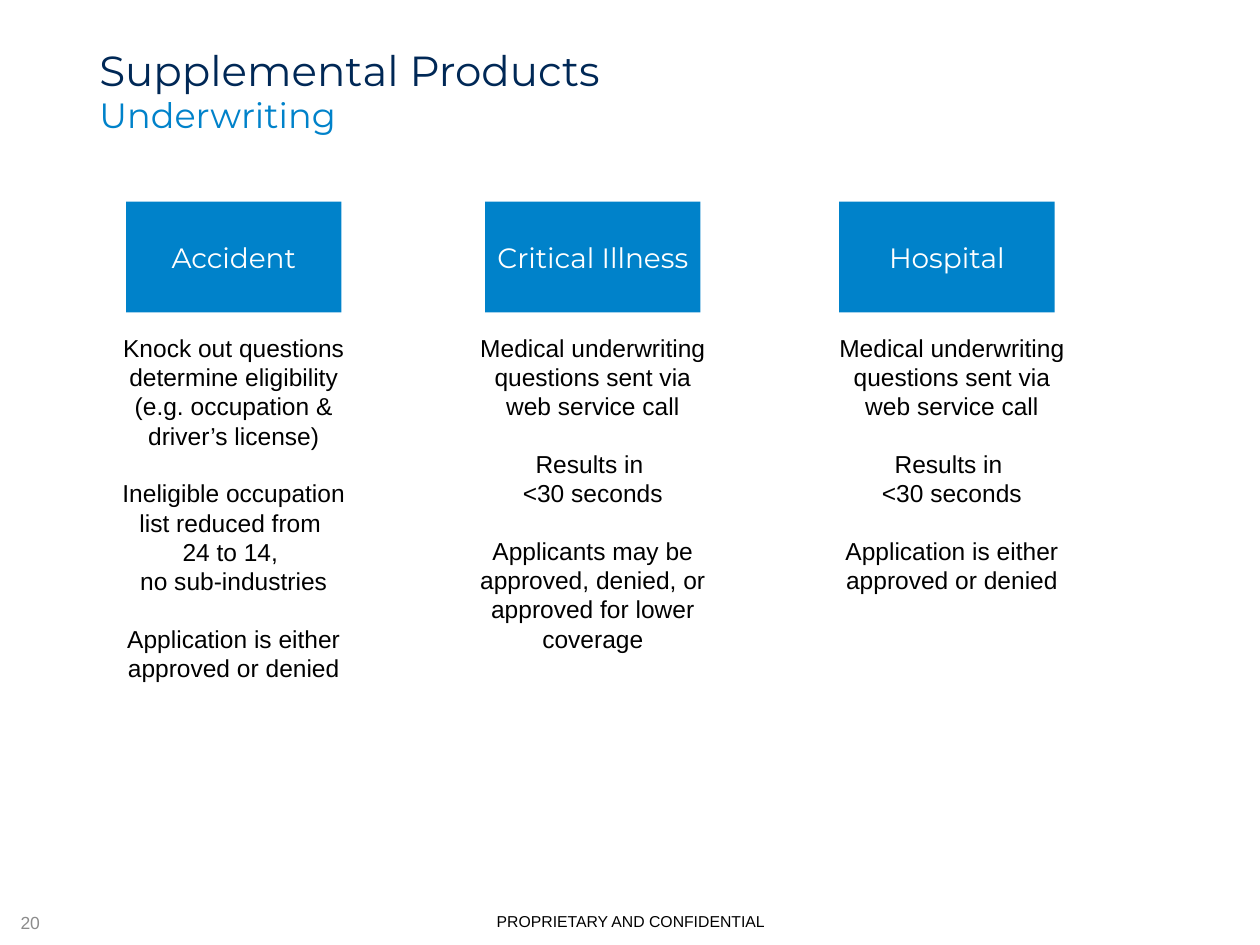
import pptx
import pptx.util
import pptx.dml.color
import pptx.enum.shapes
import pptx.enum.text

Inches = pptx.util.Inches
Pt = pptx.util.Pt
RGBColor = pptx.dml.color.RGBColor
Align = pptx.enum.text.PP_ALIGN
Anchor = pptx.enum.text.MSO_ANCHOR

NAVY = RGBColor(0x00, 0x28, 0x56)
BLUE = RGBColor(0x00, 0x82, 0xCA)
GRAY = RGBColor(0x8C, 0x8C, 0x8C)
BLACK = RGBColor(0x00, 0x00, 0x00)
WHITE = RGBColor(0xFF, 0xFF, 0xFF)
HEADING_FONT, BODY_FONT = "Montserrat", "Arial"

TITLE = "Supplemental Products"
SUBTITLE = "Underwriting"
FOOTER = "PROPRIETARY AND CONFIDENTIAL"
PAGE_NUMBER = "20"

SERVICE_CALL = "Medical underwriting questions sent via web service call"
RESULT_TIME = "Results in \n<30 seconds"
DECISION = "Application is either approved or denied"
PRODUCTS = [
    ("Accident", 1.0, [
        "Knock out questions determine eligibility (e.g. occupation & driver’s license)",
        "Ineligible occupation list reduced from \n24 to 14, \nno sub-industries",
        DECISION,
    ]),
    ("Critical Illness", 3.85, [
        SERVICE_CALL,
        RESULT_TIME,
        "Applicants may be approved, denied, or approved for lower coverage",
    ]),
    ("Hospital", 6.66, [SERVICE_CALL, RESULT_TIME, DECISION]),
]

SLIDE_WIDTH, SLIDE_HEIGHT = 10, 7.5
MARGIN = 0.69
CONTENT_WIDTH = SLIDE_WIDTH - 2 * MARGIN
HEADING_TOP, HEADING_WIDTH, HEADING_HEIGHT = 1.6, 1.71, 0.88
BODY_LEFT, BODY_TOP, BODY_WIDTH, BODY_HEIGHT = 0.83, 2.59, 2.05, 4.47
COLUMN_PITCH = 2.85
PARAGRAPH_GAP = 16


def write(shape, paragraphs, font_name, size, color, align=Align.CENTER,
          anchor=Anchor.TOP, wrap=True):
    frame = shape.text_frame
    frame.word_wrap = wrap
    frame.vertical_anchor = anchor
    for index, text in enumerate(paragraphs):
        paragraph = frame.add_paragraph() if index else frame.paragraphs[0]
        paragraph.text = text.replace("\n", "\v")
        paragraph.alignment = align
        if index:
            paragraph.space_before = Pt(PARAGRAPH_GAP)
        paragraph.font.name = font_name
        paragraph.font.size = Pt(size)
        paragraph.font.color.rgb = color


def add_text(slide, box, paragraphs, *style, **layout):
    shape = slide.shapes.add_textbox(*map(Inches, box))
    write(shape, paragraphs, *style, **layout)


def add_heading(slide, left, name):
    box = (left, HEADING_TOP, HEADING_WIDTH, HEADING_HEIGHT)
    shape = slide.shapes.add_shape(
        pptx.enum.shapes.MSO_SHAPE.RECTANGLE, *map(Inches, box))
    shape.shadow.inherit = False
    shape.fill.solid()
    shape.fill.fore_color.rgb = BLUE
    shape.line.fill.background()
    shape.text_frame.margin_left = shape.text_frame.margin_right = Inches(0.05)
    write(shape, [name], HEADING_FONT, 16, WHITE, anchor=Anchor.MIDDLE)


def main():
    presentation = pptx.Presentation()
    presentation.slide_width = Inches(SLIDE_WIDTH)
    presentation.slide_height = Inches(SLIDE_HEIGHT)
    slide = presentation.slides.add_slide(presentation.slide_layouts[6])

    add_text(slide, (MARGIN, 0.4, CONTENT_WIDTH, 0.3), [TITLE],
             HEADING_FONT, 24, NAVY, align=Align.LEFT, anchor=Anchor.MIDDLE)
    add_text(slide, (MARGIN, 0.69, CONTENT_WIDTH, 0.69), [SUBTITLE],
             HEADING_FONT, 20, BLUE, align=Align.LEFT)

    for column, (name, heading_left, points) in enumerate(PRODUCTS):
        add_heading(slide, heading_left, name)
        body_left = BODY_LEFT + column * COLUMN_PITCH
        add_text(slide, (body_left, BODY_TOP, BODY_WIDTH, BODY_HEIGHT), points,
                 BODY_FONT, 14, BLACK)

    add_text(slide, (2.87, 7.19, 4.27, 0.25), [FOOTER], BODY_FONT, 9, BLACK)
    add_text(slide, (0, 7.14, 0.48, 0.36), [PAGE_NUMBER], BODY_FONT, 10, GRAY,
             anchor=Anchor.MIDDLE)
    presentation.save("out.pptx")


if __name__ == "__main__":
    main()
